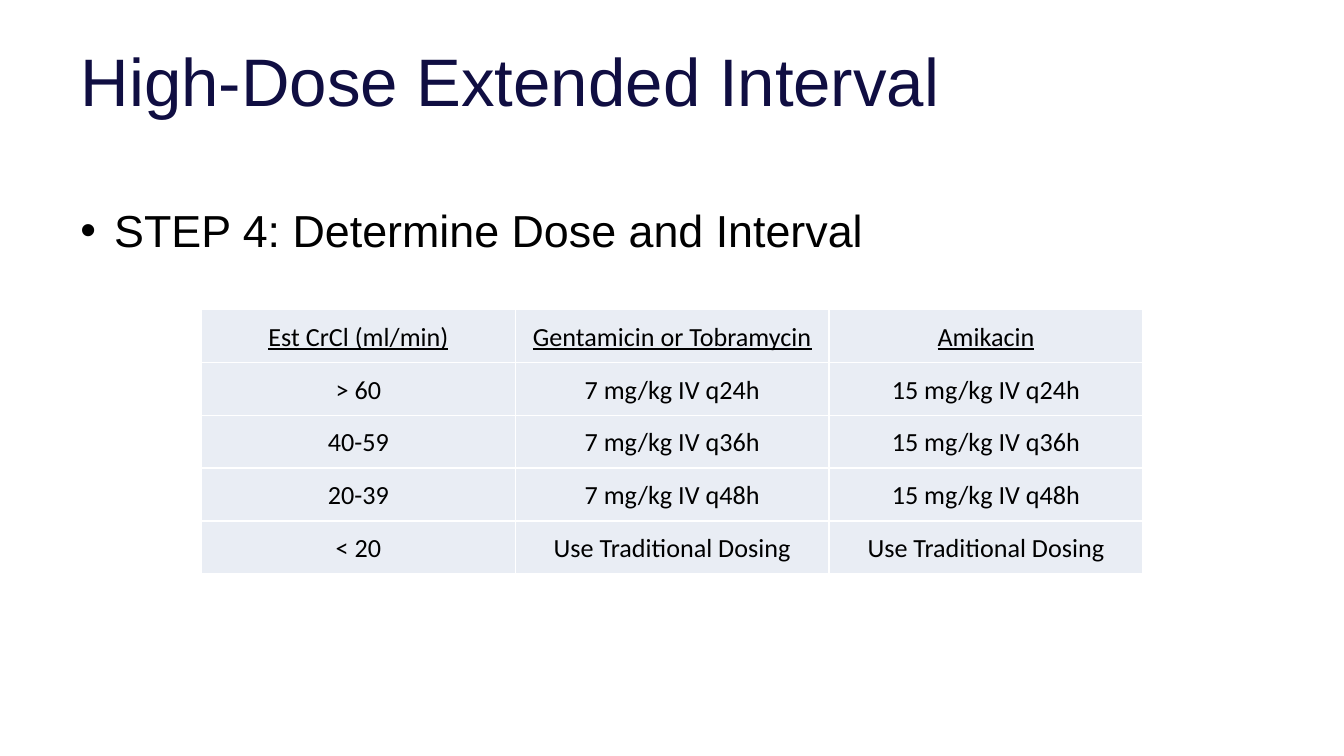
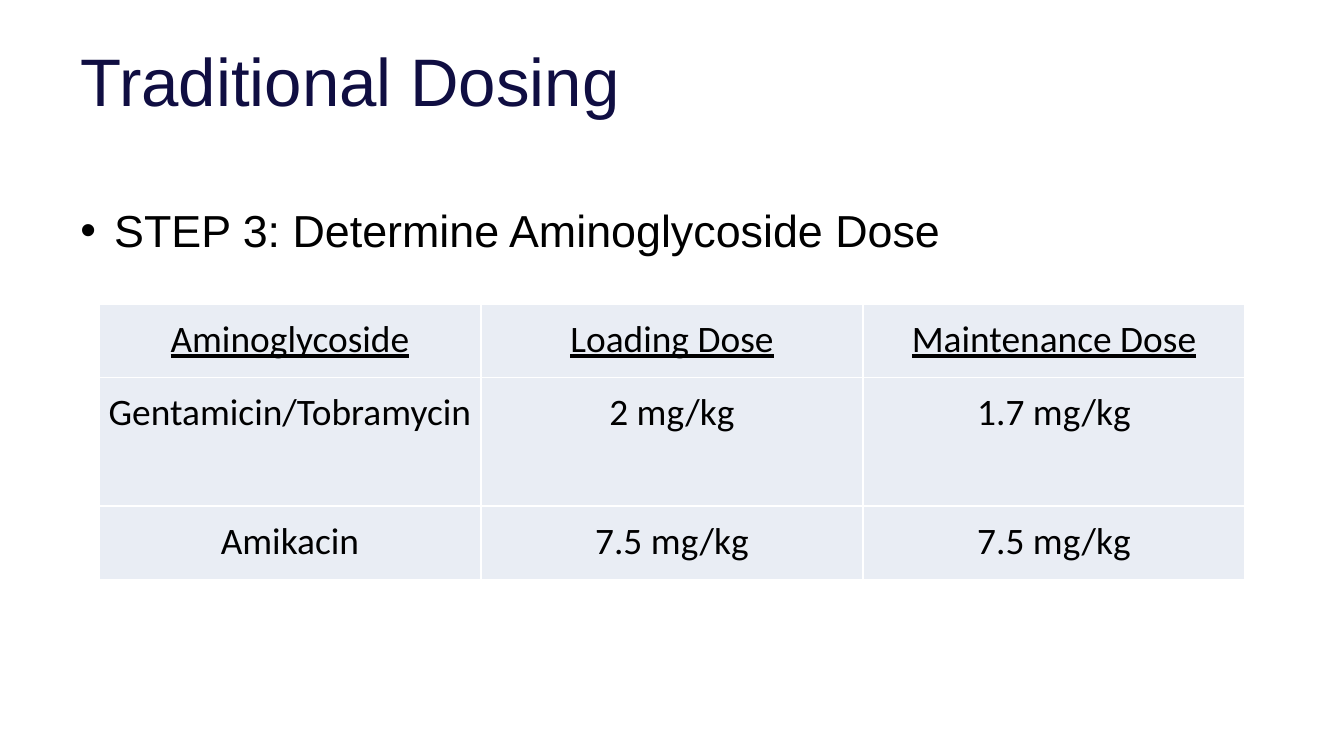
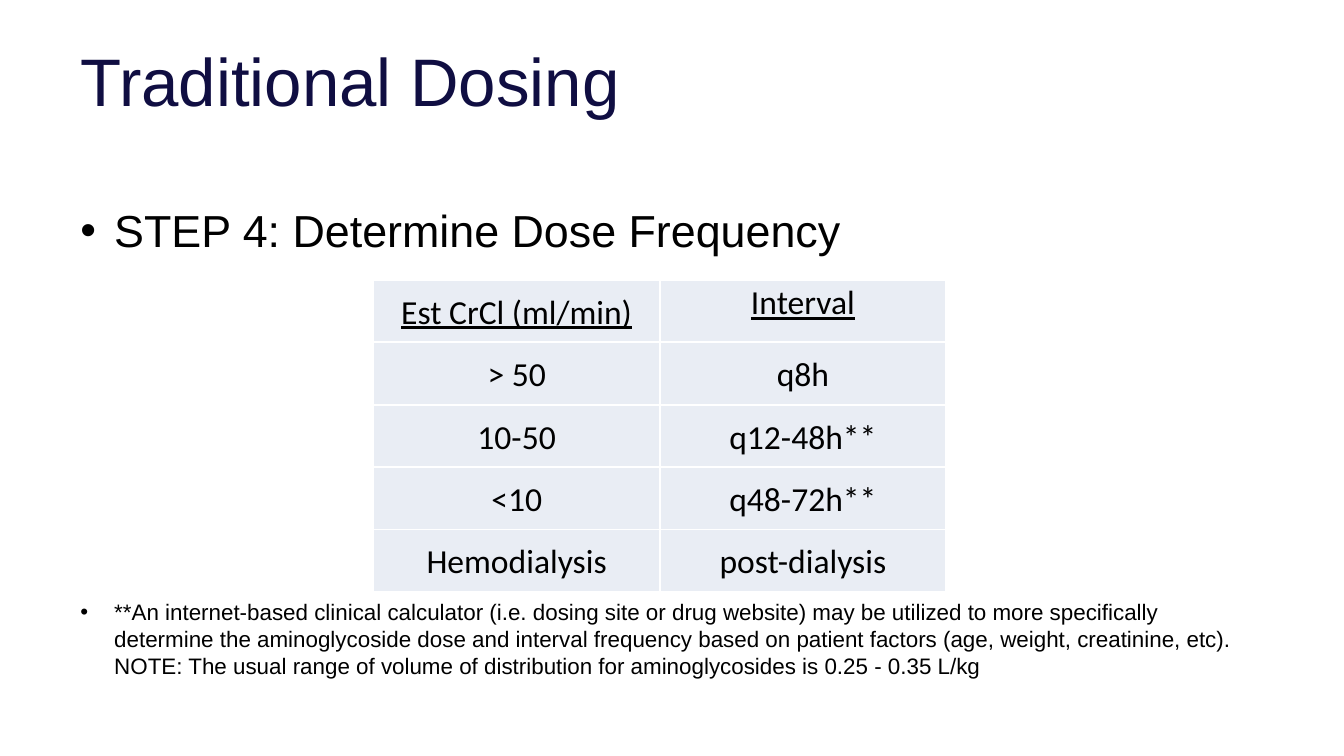
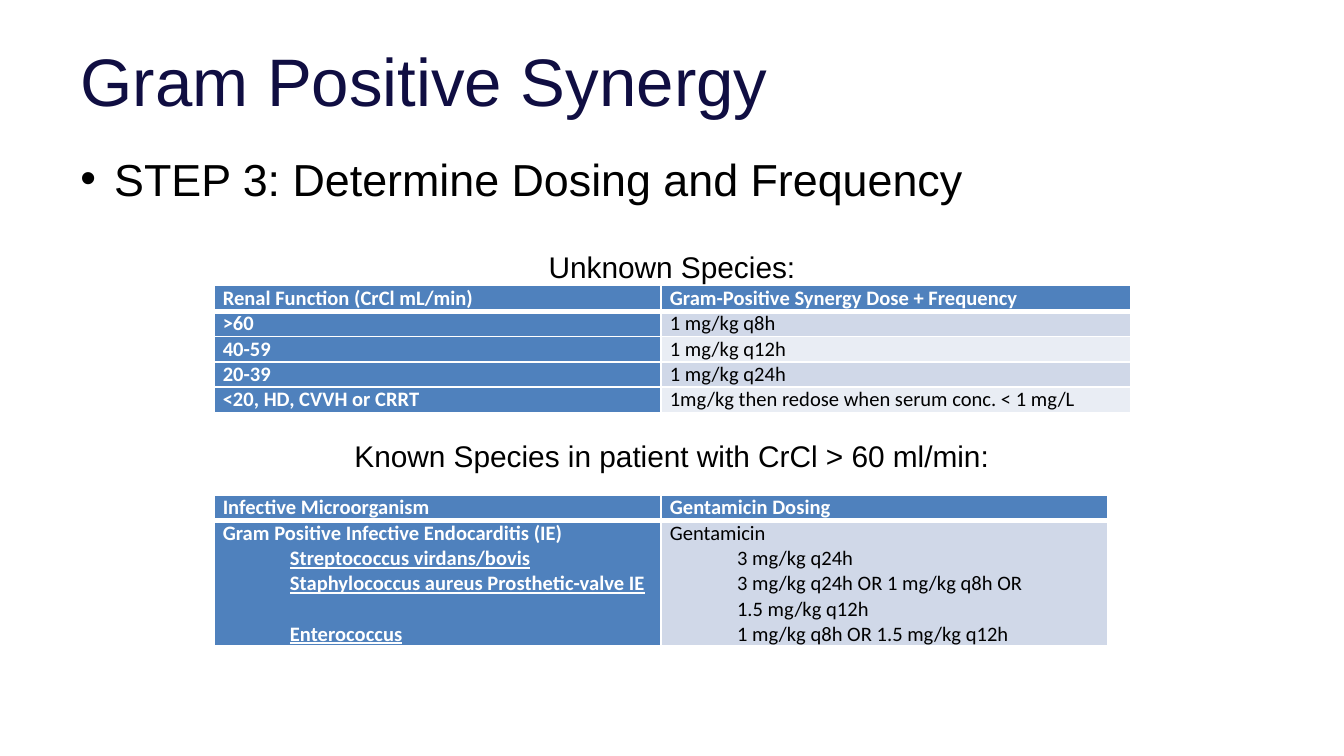
from lxml.etree import SubElement
from pptx import Presentation
from pptx.dml.color import RGBColor
from pptx.enum.text import MSO_ANCHOR, MSO_AUTO_SIZE, PP_ALIGN
from pptx.oxml.ns import qn
from pptx.util import Cm, Pt

HUES = {"navy": "100E42", "black": "000000", "white": "FFFFFF",
        "pale": "E9EDF4", "mid": "D0D8E8", "blue": "4F81BD"}
HEAD = {"size": Pt(36), "name": "Arial"}
STEP = {"size": Pt(24), "name": "Arial"}
SUB = {"size": Pt(16), "name": "Arial"}
NOTE = {"size": Pt(12), "name": "Arial"}


def put(para, text, font, hue="black", **form):
    """Write one run, setting the run's font and the paragraph's format."""
    for key, value in form.items():
        setattr(para, key, value)
    run = para.add_run()
    run.text = text
    for key, value in font.items():
        setattr(run.font, key, value)
    run.font.color.rgb = RGBColor.from_string(HUES[hue])


def bullet(para):
    props = para._p.get_or_add_pPr()
    props.set("marL", str(Cm(0.64)))
    props.set("indent", str(-Cm(0.64)))
    SubElement(props, qn("a:buFont")).set("typeface", "Arial")
    SubElement(props, qn("a:buChar")).set("char", "•")


# Table text size, line spacing and vertical margin depend on the look:
# plain tables are centred and pale, banded ones have blue heads and sides.
pages = [
    {"title": "High-Dose Extended Interval", "top": 3.71,
     "step": "STEP 4: Determine Dose and Interval",
     "tables": [{
         "at": (3.81, 5.85), "cols": [5.93] * 3, "rows": [1] * 5, "size": 14,
         "cells": [
             ["Est CrCl (ml/min)", "Gentamicin or Tobramycin", "Amikacin"],
             ["> 60", "7 mg/kg IV q24h", "15 mg/kg IV q24h"],
             ["40-59", "7 mg/kg IV q36h", "15 mg/kg IV q36h"],
             ["20-39", "7 mg/kg IV q48h", "15 mg/kg IV q48h"],
             ["< 20", "Use Traditional Dosing", "Use Traditional Dosing"]]}]},
    {"title": "Traditional Dosing", "top": 3.71,
     "step": "STEP 3: Determine Aminoglycoside Dose",
     "tables": [{
         "at": (1.87, 5.75), "cols": [7.22] * 3, "rows": [1.39, 2.43, 1.39],
         "size": 20,
         "cells": [
             ["Aminoglycoside", "Loading Dose", "Maintenance Dose"],
             ["Gentamicin/Tobramycin", "2 mg/kg", "1.7 mg/kg"],
             ["Amikacin", "7.5 mg/kg", "7.5 mg/kg"]]}]},
    {"title": "Traditional Dosing", "top": 3.71,
     "step": "STEP 4: Determine Dose Frequency",
     "note": "**An internet-based clinical calculator (i.e. dosing site or "
             "drug website) may be utilized to more specifically determine the "
             "aminoglycoside dose and interval frequency based on patient "
             "factors (age, weight, creatinine, etc). NOTE: The usual range "
             "of volume of distribution for aminoglycosides is "
             "0.25 - 0.35 L/kg",
     "tables": [{
         "at": (7.06, 5.29), "cols": [5.41] * 2, "rows": [1.18] * 5,
         "size": 18, "flush": "Interval",
         "cells": [
             ["Est CrCl (ml/min)", "Interval"],
             ["> 50", "q8h"],
             ["10-50", "q12-48h**"],
             ["<10", "q48-72h**"],
             ["Hemodialysis", "post-dialysis"]]}]},
    {"title": "Gram Positive Synergy", "top": 2.74,
     "step": "STEP 3: Determine Dosing and Frequency",
     "sub": "Unknown Species:",
     "label": "Known Species in patient with CrCl > 60 ml/min:",
     "tables": [
         {"at": (4.04, 5.4), "cols": [8.45, 8.89], "rows": [0.48] * 5,
          "size": 11, "banded": True,
          "cells": [
              ["Renal Function (CrCl mL/min)",
               "Gram-Positive Synergy Dose + Frequency"],
              [">60", "1 mg/kg q8h"],
              ["40-59", "1 mg/kg q12h"],
              ["20-39", "1 mg/kg q24h"],
              ["<20, HD, CVVH or CRRT",
               "1mg/kg then redose when serum conc. < 1 mg/L"]]},
         {"at": (4.04, 9.36), "cols": [8.45] * 2, "rows": [0.48, 2.36],
          "size": 11, "banded": True,
          "cells": [
              ["Infective Microorganism", "Gentamicin Dosing"],
              ["Gram Positive Infective Endocarditis (IE)\n"
               "Streptococcus virdans/bovis\n"
               "Staphylococcus aureus Prosthetic-valve IE\n\n"
               "Enterococcus",
               "Gentamicin\n3 mg/kg q24h\n3 mg/kg q24h OR 1 mg/kg q8h OR\n"
               "1.5 mg/kg q12h\n1 mg/kg q8h OR 1.5 mg/kg q12h"]]}]},
]

deck = Presentation()
deck.slide_width, deck.slide_height = Cm(25.4), Cm(14.29)

for page in pages:
    slide = deck.slides.add_slide(deck.slide_layouts[5])
    shapes = slide.shapes

    title = shapes.title
    title.left, title.top = Cm(1.27), Cm(0.79)
    title.width, title.height = Cm(22.86), Cm(2.16)
    frame = title.text_frame
    frame.auto_size = MSO_AUTO_SIZE.NONE
    frame.vertical_anchor = MSO_ANCHOR.TOP
    put(frame.paragraphs[0], page["title"], HEAD, "navy",
        alignment=PP_ALIGN.LEFT, line_spacing=0.9)

    body = shapes.add_textbox(Cm(1.27), Cm(page["top"]), Cm(22.86), Cm(8.51))
    frame = body.text_frame
    frame.word_wrap = True
    bullet(frame.paragraphs[0])
    put(frame.paragraphs[0], page["step"], STEP)
    if "sub" in page:
        put(frame.add_paragraph(), page["sub"], SUB,
            alignment=PP_ALIGN.CENTER, space_before=Pt(23))
    if "note" in page:
        para = frame.add_paragraph()
        bullet(para)
        put(para, page["note"], NOTE, space_before=Pt(183))

    for data in page["tables"]:
        cols, rows, cells = data["cols"], data["rows"], data["cells"]
        banded = data.get("banded", False)
        left, top = data["at"]
        grid = shapes.add_table(len(rows), len(cols), Cm(left), Cm(top),
                                Cm(sum(cols)), Cm(sum(rows))).table
        grid.first_row = grid.horz_banding = False
        for col, width in zip(grid.columns, cols):
            col.width = Cm(width)
        for row, height in zip(grid.rows, rows):
            row.height = Cm(height)

        for r, line in enumerate(cells):
            for c, text in enumerate(line):
                cell = grid.cell(r, c)
                dark = banded and (r == 0 or c == 0)
                pad = 0 if banded or text == data.get("flush") else 0.18
                cell.margin_left = cell.margin_right = Cm(0.17)
                cell.margin_top = cell.margin_bottom = Cm(pad)

                props = cell._tc.get_or_add_tcPr()
                for side in ("lnL", "lnR", "lnT", "lnB"):
                    thick = banded and (r, side) in ((0, "lnB"), (1, "lnT"))
                    edge = SubElement(props, qn("a:" + side),
                                      w=str(Pt(3 if thick else 1)))
                    paint = SubElement(edge, qn("a:solidFill"))
                    SubElement(paint, qn("a:srgbClr"), val=HUES["white"])
                tint = "blue" if dark else "mid" if banded and r % 2 else "pale"
                cell.fill.solid()
                cell.fill.fore_color.rgb = RGBColor.from_string(HUES[tint])

                font = {"size": Pt(data["size"]), "name": "Calibri",
                        "bold": dark, "underline": r == 0 and not banded}
                form = {} if banded else {"alignment": PP_ALIGN.CENTER,
                                          "line_spacing": 1.07}
                para, gap = cell.text_frame.paragraphs[0], 0
                for n, part in enumerate(text.split("\n")):
                    if not part:
                        gap = 13.4
                        continue
                    if n:
                        para = cell.text_frame.add_paragraph()
                        para._p.get_or_add_pPr().set("marL", str(Cm(1.27)))
                        font["underline"] = dark
                        form["space_before"] = Pt(gap)
                    put(para, part, font, "white" if dark else "black", **form)

    if "label" in page:
        label = shapes.add_textbox(Cm(6.35), Cm(8.14), Cm(12.7), Cm(0.9))
        put(label.text_frame.paragraphs[0], page["label"], SUB,
            alignment=PP_ALIGN.CENTER)
        label.text_frame.word_wrap = True

deck.save("out.pptx")
